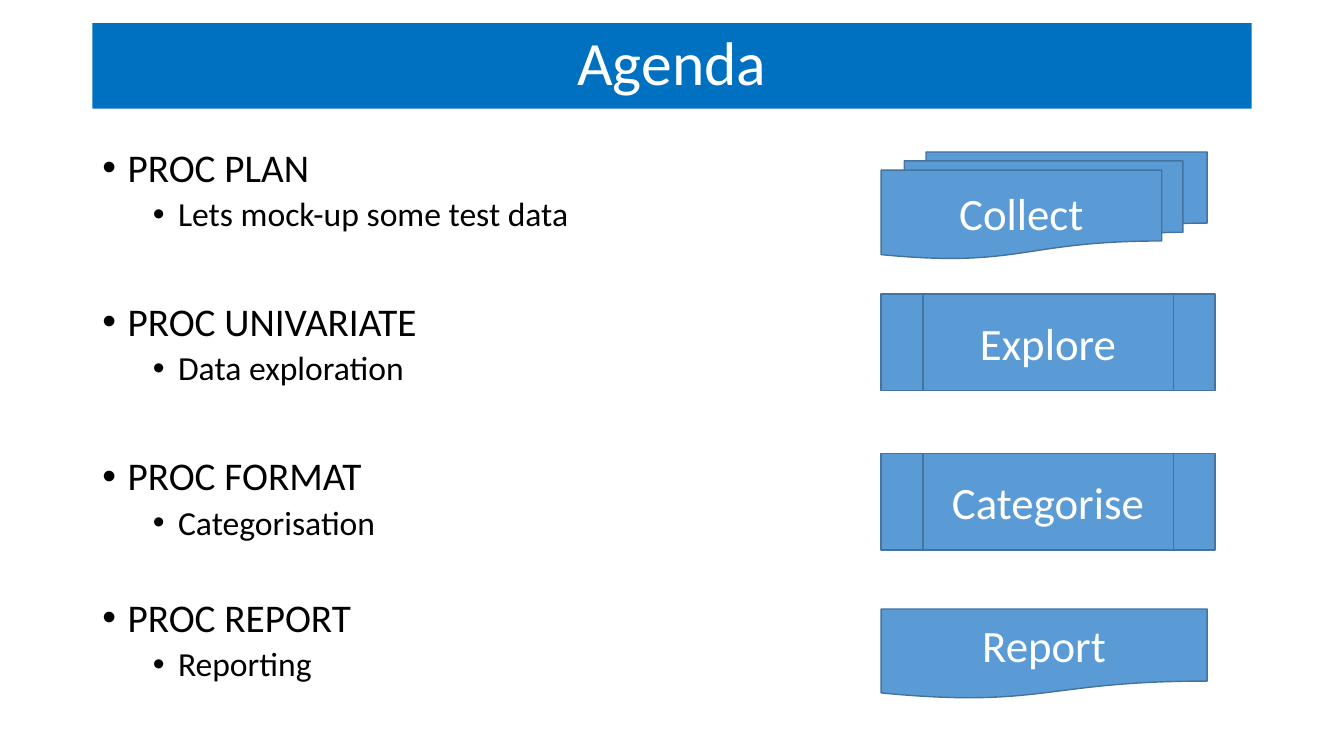
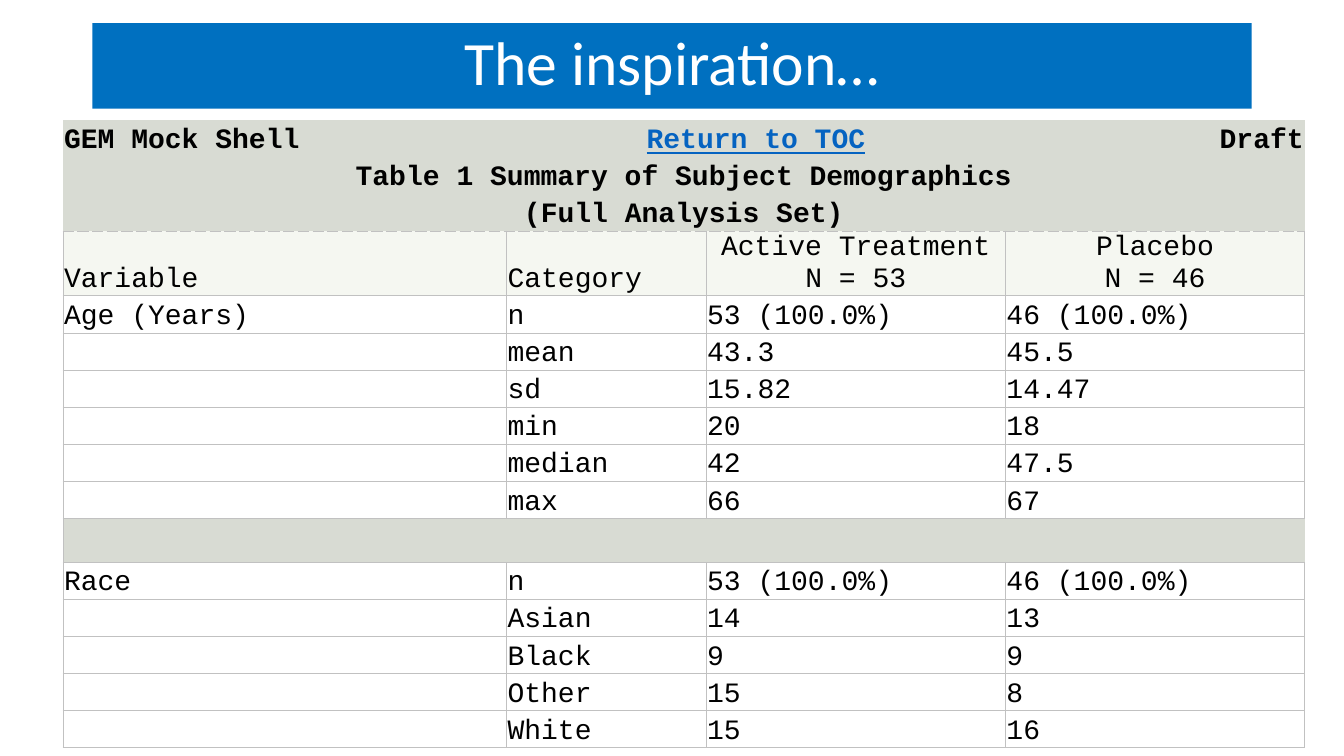
import lxml.etree
import pptx
import pptx.dml.color
import pptx.enum.shapes
import pptx.enum.text
import pptx.oxml.ns
import pptx.util

RGBColor = pptx.dml.color.RGBColor
Pt = pptx.util.Pt
ALIGN = pptx.enum.text.PP_ALIGN
ANCHOR = pptx.enum.text.MSO_ANCHOR
PRESET = pptx.enum.shapes.MSO_SHAPE
qn = pptx.oxml.ns.qn

BAND_BLUE = RGBColor(0x00, 0x70, 0xC0)
STEP_BLUE = RGBColor(0x5B, 0x9B, 0xD5)
STEP_EDGE = RGBColor(0x43, 0x73, 0x9E)
LINK_BLUE = RGBColor(0x05, 0x63, 0xC1)
CAPTION_GREY = RGBColor(0xD8, 0xDB, 0xD3)
HEADING_GREY = RGBColor(0xF5, 0xF7, 0xF1)
RULE_GREY = RGBColor(0xC1, 0xC1, 0xC1)
BLACK = RGBColor(0, 0, 0)
WHITE = RGBColor(255, 255, 255)

# The slide is a grid of 160 columns by 90 rows of square units.
UNIT = pptx.util.Inches(1) // 12
COLUMNS, ROWS = 160, 90
TITLE_AND_BODY, TITLE_ONLY = 1, 5
PLAIN_TABLE = "{2D5ABB26-0587-4C30-8999-92F81FD0307C}"

AGENDA = [  # topic, detail, points of space above the topic
    ("PROC PLAN", "Lets mock-up some test data", 0),
    ("PROC UNIVARIATE", "Data exploration", 49),
    ("PROC FORMAT", "Categorisation", 49),
    ("PROC REPORT", "Reporting", 40),
]
STEPS = [  # label, outline, top, width, height
    ("Collect", PRESET.FLOWCHART_MULTIDOCUMENT, 18.1, 38.8, 12.7),
    ("Explore", PRESET.FLOWCHART_PREDEFINED_PROCESS, 35, 39.75, 11.5),
    ("Categorise", PRESET.FLOWCHART_PREDEFINED_PROCESS, 54, 39.75, 11.5),
    ("Report", PRESET.FLOWCHART_DOCUMENT, 72.5, 38.8, 10.7),
]
COLUMN_WIDTHS = [52.8, 23.76, 35.64, 35.64]
CAPTIONS = [  # one list per row: text, first column, last column, align, colour
    [("GEM Mock Shell", 0, 0, ALIGN.LEFT, BLACK),
     ("Return to TOC", 1, 2, ALIGN.CENTER, LINK_BLUE),
     ("Draft", 3, 3, ALIGN.RIGHT, BLACK)],
    [("Table 1 Summary of Subject Demographics", 0, 3, ALIGN.CENTER, BLACK)],
    [("(Full Analysis Set)", 0, 3, ALIGN.CENTER, BLACK)],
]
HEADINGS = ["Variable", "Category", "Active Treatment\nN = 53", "Placebo\nN = 46"]
AGE = [
    ("Age (Years)", "n", "53 (100.0%)", "46 (100.0%)"),
    ("", "mean", "43.3", "45.5"),
    ("", "sd", "15.82", "14.47"),
    ("", "min", "20", "18"),
    ("", "median", "42", "47.5"),
    ("", "max", "66", "67"),
]
RACE = [
    ("Race", "n", "53 (100.0%)", "46 (100.0%)"),
    ("", "Asian", "14", "13"),
    ("", "Black", "9", "9"),
    ("", "Other", "15", "8"),
    ("", "White", "15", "16"),
]


def grid(*lengths):
    """Turn grid units into slide lengths."""
    return [pptx.util.Emu(round(length * UNIT)) for length in lengths]


def assign(target, values):
    for name, value in values.items():
        setattr(target, name, value)


class Deck:
    def __init__(self):
        self.presentation = pptx.Presentation()
        width, height = grid(COLUMNS, ROWS)
        assign(self.presentation, {"slide_width": width, "slide_height": height})
        self.slide = None

    def place(self, shape, left, top, width, height):
        names = ("left", "top", "width", "height")
        assign(shape, dict(zip(names, grid(left, top, width, height))))

    def set_text(self, paragraph, text, size, color, font="Calibri", **extras):
        paragraph.text = text
        for run in paragraph.runs:
            assign(run.font, {"name": font, "size": Pt(size), **extras})
            run.font.color.rgb = color

    def add_slide(self, layout, title):
        layouts = self.presentation.slide_layouts
        self.slide = self.presentation.slides.add_slide(layouts[layout])
        band = self.slide.shapes.title
        self.place(band, 11, 2.75, 138, 10.2)
        band.fill.solid()
        band.fill.fore_color.rgb = BAND_BLUE
        assign(band.text_frame, {
            "auto_size": pptx.enum.text.MSO_AUTO_SIZE.NONE,
            "vertical_anchor": ANCHOR.MIDDLE})
        heading = band.text_frame.paragraphs[0]
        assign(heading, {"alignment": ALIGN.CENTER, "line_spacing": 0.9})
        self.set_text(heading, title, 44, WHITE)

    def add_bullet(self, frame, text, level, space):
        first = not frame.paragraphs[0].text
        paragraph = frame.paragraphs[0] if first else frame.add_paragraph()
        properties = paragraph._p.get_or_add_pPr()
        indent = UNIT * 3
        properties.set("marL", str(indent * (1 + 2 * level)))
        properties.set("indent", str(-indent))
        bullet_font = lxml.etree.SubElement(properties, qn("a:buFont"))
        bullet_font.set("typeface", "Arial")
        lxml.etree.SubElement(properties, qn("a:buChar")).set("char", "•")
        assign(paragraph, {"level": level, "line_spacing": 0.9,
                           "space_before": Pt(space)})
        self.set_text(paragraph, text, 28 - 4 * level, BLACK)

    def add_agenda(self, topics):
        agenda = self.slide.placeholders[1]
        self.place(agenda, 11, 17.05, 78.6, 70.3)
        frame = agenda.text_frame
        frame.auto_size = pptx.enum.text.MSO_AUTO_SIZE.NONE
        for topic, detail, space in topics:
            self.add_bullet(frame, topic, 0, space)
            self.add_bullet(frame, detail, 1, 5)

    def add_step(self, label, outline, top, width, height):
        step = self.slide.shapes.add_shape(
            outline, *grid(104.9, top, width, height))
        step.shadow.inherit = False
        step.fill.solid()
        step.fill.fore_color.rgb = STEP_BLUE
        step.line.color.rgb = STEP_EDGE
        step.line.width = Pt(1)
        step.text_frame.vertical_anchor = ANCHOR.MIDDLE
        paragraph = step.text_frame.paragraphs[0]
        paragraph.alignment = ALIGN.CENTER
        self.set_text(paragraph, label, 32, WHITE)

    def add_table(self, row_heights):
        row_count, column_count = len(row_heights), len(COLUMN_WIDTHS)
        frame = self.slide.shapes.add_table(
            row_count, column_count,
            *grid(7.5, 14.28, sum(COLUMN_WIDTHS), sum(row_heights)))
        table = frame.table
        assign(table, {"first_row": False, "horz_banding": False})
        table._tbl.tblPr.find(qn("a:tableStyleId")).text = PLAIN_TABLE
        for column, width in zip(table.columns, grid(*COLUMN_WIDTHS)):
            column.width = width
        for row, height in zip(table.rows, grid(*row_heights)):
            row.height = height
        return table

    def style_cell(self, cell, fill, borders):
        """Set margins, fill and borders, given as side letter to dash name."""
        edge = pptx.util.Inches(0.01)
        assign(cell, {"margin_left": edge, "margin_right": edge,
                      "margin_top": edge, "margin_bottom": 0,
                      "vertical_anchor": ANCHOR.BOTTOM})
        properties = cell._tc.get_or_add_tcPr()
        for side in "LRTB":
            line = lxml.etree.SubElement(properties, qn("a:ln" + side))
            if side not in borders:
                line.set("w", "0")
                lxml.etree.SubElement(line, qn("a:noFill"))
                continue
            line.set("w", str(Pt(0.5)))
            solid = lxml.etree.SubElement(line, qn("a:solidFill"))
            lxml.etree.SubElement(solid, qn("a:srgbClr")).set("val", str(RULE_GREY))
            dash = lxml.etree.SubElement(line, qn("a:prstDash"))
            dash.set("val", borders[side])
        cell.fill.solid()
        cell.fill.fore_color.rgb = fill

    def fill_cell(self, cell, text, align=ALIGN.LEFT, color=BLACK, **extras):
        paragraph = cell.text_frame.paragraphs[0]
        paragraph.alignment = align
        self.set_text(paragraph, text, 20, color, "Courier New", **extras)

    def add_summary(self):
        heading_row = len(CAPTIONS)
        body = [HEADINGS, *AGE, None, *RACE]
        spacer_row = heading_row + body.index(None)
        heights = [4.42] * (heading_row + len(body))
        heights[heading_row], heights[spacer_row] = 6.36, 5.2
        table = self.add_table(heights)

        boxed = dict.fromkeys("LRTB", "solid")
        looks = {row: (CAPTION_GREY, {}) for row in range(heading_row)}
        looks[heading_row - 1] = (CAPTION_GREY, {"B": "dash"})
        looks[heading_row] = (HEADING_GREY, {**boxed, "T": "dash"})
        looks[spacer_row] = (CAPTION_GREY, dict.fromkeys("LTB", "solid"))
        for row in range(len(heights)):
            fill, borders = looks.get(row, (WHITE, boxed))
            for column in range(len(COLUMN_WIDTHS)):
                self.style_cell(table.cell(row, column), fill, borders)

        for row, captions in enumerate(CAPTIONS):
            for text, first, last, align, color in captions:
                cell = table.cell(row, first)
                if last > first:
                    cell.merge(table.cell(row, last))
                self.fill_cell(cell, text, align, color, bold=True,
                               underline=color == LINK_BLUE)
        table.cell(spacer_row, 0).merge(table.cell(spacer_row, 3))
        for row, texts in enumerate(body, heading_row):
            for column, text in enumerate(texts or ()):
                centred = row == heading_row and column > 1
                self.fill_cell(table.cell(row, column), text,
                               ALIGN.CENTER if centred else ALIGN.LEFT)


def main():
    deck = Deck()
    deck.add_slide(TITLE_AND_BODY, "Agenda")
    deck.add_agenda(AGENDA)
    for step in STEPS:
        deck.add_step(*step)
    deck.add_slide(TITLE_ONLY, "The inspiration…")
    deck.add_summary()
    deck.presentation.save("out.pptx")


if __name__ == "__main__":
    main()
